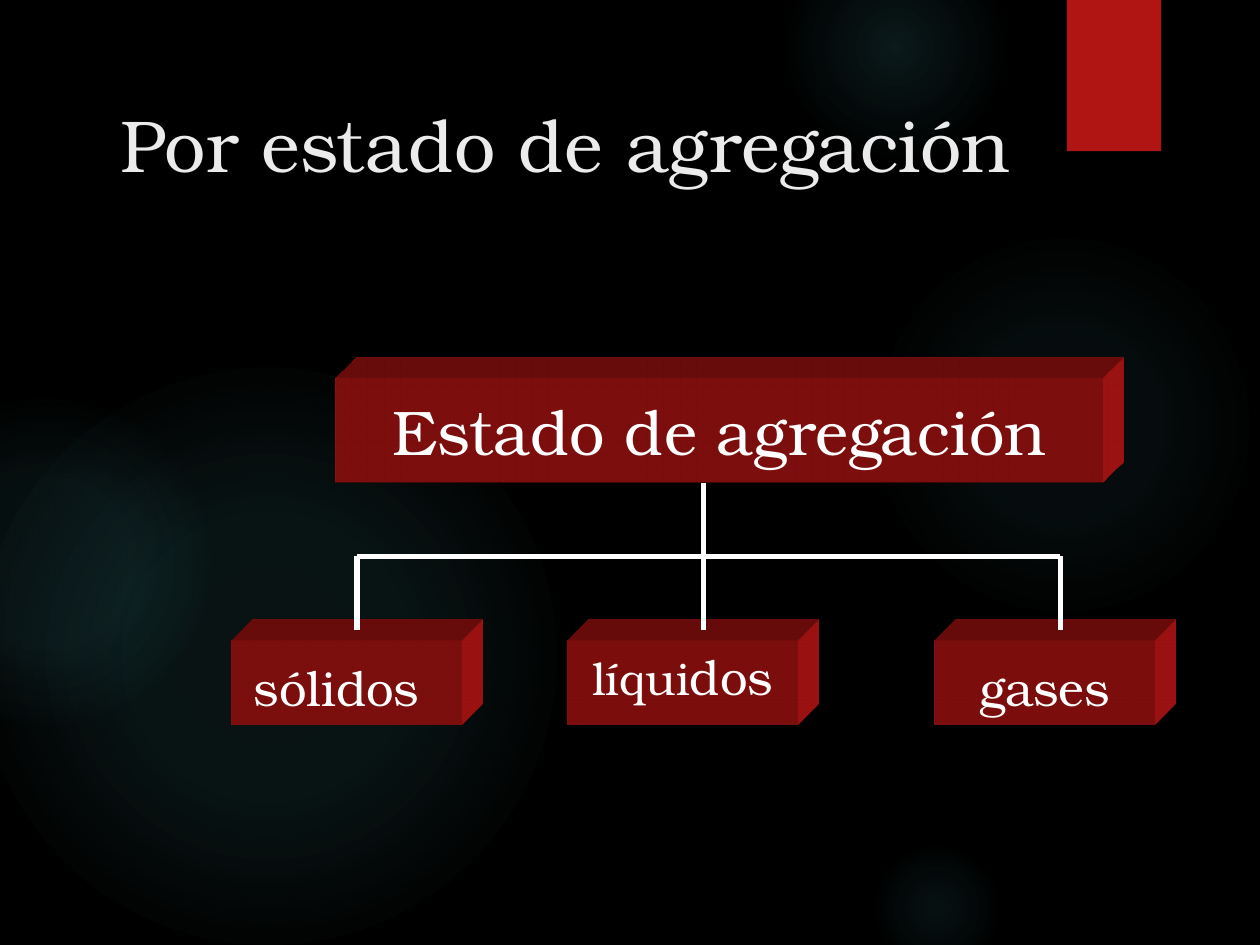
from lxml.etree import SubElement as Sub
from pptx import Presentation
from pptx.dml.color import RGBColor
from pptx.enum.shapes import MSO_CONNECTOR, MSO_SHAPE
from pptx.enum.text import MSO_ANCHOR as Anchor, PP_ALIGN as Align
from pptx.oxml import parse_xml
from pptx.oxml.ns import nsdecls, qn
from pptx.util import Inches, Pt

BLACK = RGBColor(0x00, 0x00, 0x00)
WHITE = RGBColor(0xFF, 0xFF, 0xFF)
PALE = RGBColor(0xEB, 0xEB, 0xEB)
RED = RGBColor(0xB0, 0x15, 0x13)
TEAL = RGBColor(0x50, 0xB9, 0xC1)
FONT = "TeX Gyre Bonum"
CELL = Inches(1) / 12  # the slide is a grid of 120 columns by 90 rows

deck = Presentation()
deck.slide_width, deck.slide_height = Inches(10), Inches(7.5)
slide = deck.slides.add_slide(deck.slide_layouts[6])
slide.background.fill.solid()
slide.background.fill.fore_color.rgb = BLACK
shapes = slide.shapes


def grid(*cells):
    return [round(cell * CELL) for cell in cells]


def write(shape, *runs, color=WHITE, align=Align.CENTER, anchor=Anchor.TOP, wrap=True):
    """Put (text, size) runs into one paragraph of the shape."""
    frame = shape.text_frame
    frame.word_wrap, frame.vertical_anchor = wrap, anchor
    para = frame.paragraphs[0]
    para.alignment = align
    for text, size in runs:
        run = para.add_run()
        run.text = text
        run.font.name, run.font.size = FONT, Pt(size)
        run.font.color.rgb = color


# Glowing discs: column, row, diameter, then (position, opacity) stops in percent
glows = [
    (82.7, 22, 37, [(0, 7), (36, 6), (69, 0)]),
    (74.7, -6, 21, [(0, 14), (36, 7), (73, 0)]),
    (82.7, 80, 13, [(0, 9), (36, 5), (66, 0)]),
    (-2, 35, 55, [(0, 11), (36, 10), (75, 0)]),
    (-11, 38, 31, [(0, 8), (36, 8), (72, 0)]),
]
for col, row, size, stops in glows:
    disc = shapes.add_shape(MSO_SHAPE.OVAL, *grid(col, row, size, size))
    disc.shadow.inherit = False
    disc.line.fill.background()
    marks = "".join(
        f'<a:gs pos="{pos * 1000}"><a:srgbClr val="{TEAL}">'
        f'<a:alpha val="{alpha * 1000}"/></a:srgbClr></a:gs>'
        for pos, alpha in stops)
    disc._element.spPr.find(qn("a:prstGeom")).addnext(parse_xml(
        f'<a:gradFill {nsdecls("a")}><a:gsLst>{marks}</a:gsLst><a:path path="circle">'
        '<a:fillToRect l="50000" t="50000" r="50000" b="50000"/></a:path></a:gradFill>'))

# Ribbon and title
ribbon = shapes.add_shape(MSO_SHAPE.RECTANGLE, *grid(101.6, 0, 9, 14.4))
title = shapes.add_textbox(*grid(6.4, 8.6, 110.3, 10))
title.text_frame.margin_left = Inches(0.42)
write(title, ("Por estado de agregación", 42), color=PALE, align=Align.LEFT,
      anchor=Anchor.MIDDLE)

# Boxes of the tree, extruded up and to the right
spots = [(32, 36, 73, 10), (22, 61, 22, 8), (54, 61, 22, 8), (89, 61, 21, 8)]
boxes = [shapes.add_shape(MSO_SHAPE.RECTANGLE, *grid(*spot)) for spot in spots]
for shape in [ribbon, *boxes]:
    shape.shadow.inherit = False
    shape.fill.solid()
    shape.fill.fore_color.rgb = RED
    shape.line.fill.background()
for box in boxes:
    props = box._element.spPr
    scene = Sub(props, qn("a:scene3d"))
    Sub(scene, qn("a:camera"), prst="legacyObliqueTopRight")
    Sub(scene, qn("a:lightRig"), rig="legacyFlat3", dir="b")
    solid = Sub(props, qn("a:sp3d"), extrusionH="430200", prstMaterial="legacyMatte")
    tint = Sub(solid, qn("a:extrusionClr"))
    Sub(tint, qn("a:srgbClr"), val=str(RED))
write(boxes[0], ("Estado de agregación", 36), anchor=Anchor.MIDDLE, wrap=False)

# Branches: a crossbar, two arms and the trunk
branches = [(34, 53, 101, 53), (34, 53, 34, 60), (67, 46, 67, 60), (101, 53, 101, 60)]
for ends in branches:
    branch = shapes.add_connector(MSO_CONNECTOR.STRAIGHT, *grid(*ends))
    branch.line.color.rgb, branch.line.width = WHITE, Pt(3)
    Sub(branch._element.spPr, qn("a:effectLst"))

# Labels of the three states
labels = [
    (23, 62, 19, Align.LEFT, [("sólidos", 28)]),
    (55, 61, 20, Align.CENTER, [("líqui", 26), ("dos", 28)]),
    (90, 62, 19, Align.CENTER, [("gases", 28)]),
]
for col, row, width, align, runs in labels:
    write(shapes.add_textbox(*grid(col, row, width, 6.8)), *runs, align=align)

deck.save("out.pptx")
